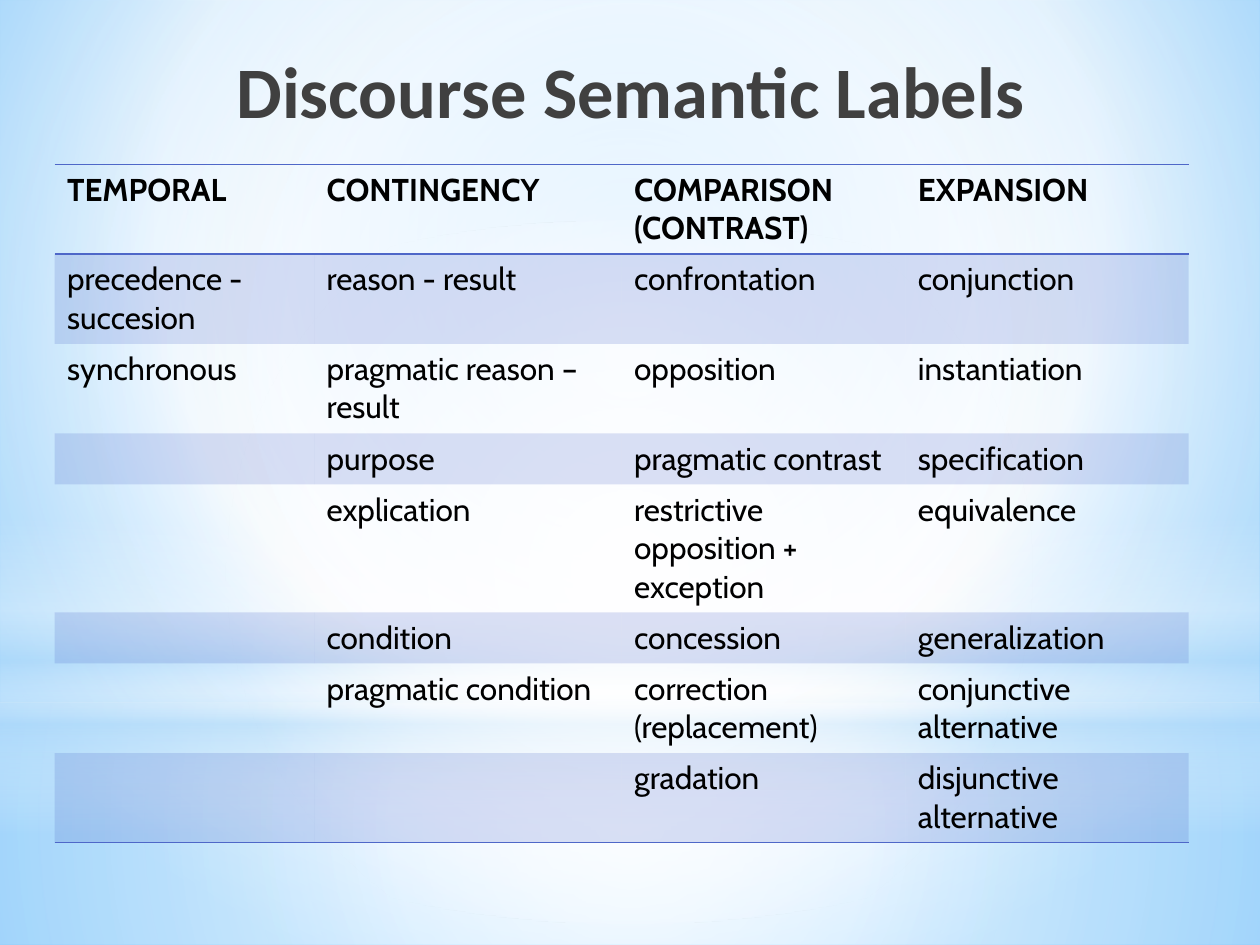
from dataclasses import dataclass
from pptx import Presentation
from pptx.dml.color import RGBColor as RGB
from pptx.enum.shapes import MSO_SHAPE as Kind
from pptx.enum.text import MSO_ANCHOR as Anchor, PP_ALIGN as Align
from pptx.oxml import parse_xml
from pptx.oxml.ns import nsdecls, qn
from pptx.util import Cm, Pt


@dataclass(frozen=True)
class Theme:
    white: str = "FFFFFF"
    haze: str = "B4DCFA"
    sky: str = "9ED5FF"
    edge: str = "5BB9FF"
    rule: str = "4E67C8"
    ink: str = "000000"
    head: str = "404040"
    band: int = 20
    line: float = 1
    body: float = 18
    title: float = 41.4
    text: str = "Cabin"
    bold: str = "Calibri"
    plain: str = "{2D5ABB26-0587-4C30-8999-92F81FD0307C}"


T = Theme()
CENTER = (50, 50, 50, 50)
ROWS = [
    ("TEMPORAL", "CONTINGENCY", "COMPARISON (CONTRAST)", "EXPANSION"),
    ("precedence - succesion", "reason - result", "confrontation", "conjunction"),
    ("synchronous", "pragmatic reason – result", "opposition", "instantiation"),
    ("", "purpose", "pragmatic contrast", "specification"),
    ("", "explication", "restrictive opposition + exception", "equivalence"),
    ("", "condition", "concession", "generalization"),
    ("", "pragmatic condition", "correction (replacement)", "conjunctive alternative"),
    ("", "", "gradation", "disjunctive alternative"),
]
WIDTHS = (5.23, 6.2, 5.72, 5.71)


def style(font, **vals):
    for name, val in vals.items():
        setattr(font, name, val)


def color(tone, alpha=100):
    return f'<a:srgbClr val="{tone}"><a:alpha val="{alpha * 1000}"/></a:srgbClr>'


def blend(node, stops, focus=None):
    marks = "".join(f'<a:gs pos="{pos * 1000}">{color(*tone)}</a:gs>' for pos, *tone in stops)
    if focus:
        sides = " ".join(f'{side}="{val * 1000}"' for side, val in zip("ltrb", focus))
        way = f'<a:path path="circle"><a:fillToRect {sides}/></a:path>'
    else:
        way = '<a:lin ang="5400000" scaled="0"/>'
    old = node.xpath(".//a:solidFill")[0]
    old.getparent().replace(old, parse_xml(
        f'<a:gradFill {nsdecls("a")} rotWithShape="1"><a:gsLst>{marks}</a:gsLst>{way}</a:gradFill>'))


def glow(slide, kind, box, stops, focus=None):
    shape = slide.shapes.add_shape(kind, *map(Cm, box))
    shape.shadow.inherit = False
    shape.line.fill.background()
    shape.fill.solid()
    shape.fill.fore_color.rgb = RGB.from_string(T.white)
    blend(shape._element.spPr, stops, focus)


def scene(slide, box):
    x, y, w, h = box
    fill = slide.background.fill
    fill.solid()
    fill.fore_color.rgb = RGB.from_string(T.sky)
    blend(slide._element, [(0, T.sky), (60, T.white), (100, T.edge)], (20, 10, 20, 60))
    split = 14.17
    glow(slide, Kind.RECTANGLE, (x, y + split, w, h - split),
         [(0, T.white, 91), (37, T.white, 76), (100, T.haze, 79)], CENTER)
    glow(slide, Kind.RECTANGLE, (x, y, w, split),
         [(0, T.white, 89), (48, T.white, 62), (100, T.haze, 79)], CENTER)
    glow(slide, Kind.RECTANGLE, (x, y + 10.46, w, 6.35),
         [(0, T.white, 0), (29, T.white, 30), (45, T.haze, 40),
          (55, T.white, 26), (65, T.haze, 60), (100, T.white, 0)])
    glow(slide, Kind.OVAL, (x, y + 4.45, w, split), [(0, T.white), (56, T.white, 0)], CENTER)


def title(slide, box):
    frame = slide.shapes.add_textbox(*map(Cm, box)).text_frame
    frame.word_wrap = True
    frame.vertical_anchor = Anchor.TOP
    par = frame.paragraphs[0]
    par.alignment = Align.RIGHT
    run = par.add_run()
    run.text = "Discourse Semantic Labels"
    style(run.font, name=T.bold, size=Pt(T.title), bold=True)
    run.font.color.rgb = RGB.from_string(T.head)


def border(cell, sides):
    for spot, side in enumerate(sides):
        cell._tc.get_or_add_tcPr().insert(spot, parse_xml(
            f'<a:ln{side} {nsdecls("a")} w="{Pt(T.line)}">'
            f'<a:solidFill>{color(T.rule)}</a:solidFill></a:ln{side}>'))


def entry(cell, text, row):
    par = cell.text_frame.paragraphs[0]
    par.text = text
    style(par.font, name=T.text, size=Pt(T.body), bold=row == 0)
    par.font.color.rgb = RGB.from_string(T.ink)
    if row % 2:
        cell.fill.solid()
        cell.fill.fore_color.rgb = RGB.from_string(T.rule)
        tone = cell._tc.tcPr.xpath("./a:solidFill/a:srgbClr")[0]
        tone.append(parse_xml(f'<a:alpha {nsdecls("a")} val="{T.band * 1000}"/>'))
    else:
        cell.fill.background()
    border(cell, {0: "TB", len(ROWS) - 1: "B"}.get(row, ""))


def labels(slide, box):
    grid = slide.shapes.add_table(len(ROWS), len(WIDTHS), *map(Cm, box)).table
    style(grid, first_row=False, horz_banding=False)
    grid._tbl.tblPr.find(qn("a:tableStyleId")).text = T.plain
    for col, wide in zip(grid.columns, WIDTHS):
        col.width = Cm(wide)
    for r, texts in enumerate(ROWS):
        for c, text in enumerate(texts):
            entry(grid.cell(r, c), text, r)


def main():
    deck = Presentation()
    style(deck, slide_width=Cm(25.4), slide_height=Cm(19.05))
    slide = deck.slides.add_slide(deck.slide_layouts[6])
    scene(slide, (0, 0, 25.4, 19.05))
    labels(slide, (1.1, 3.32, sum(WIDTHS), 8.24))
    title(slide, (2.82, 0.81, 18.08, 3.18))
    deck.save("out.pptx")


if __name__ == "__main__":
    main()
